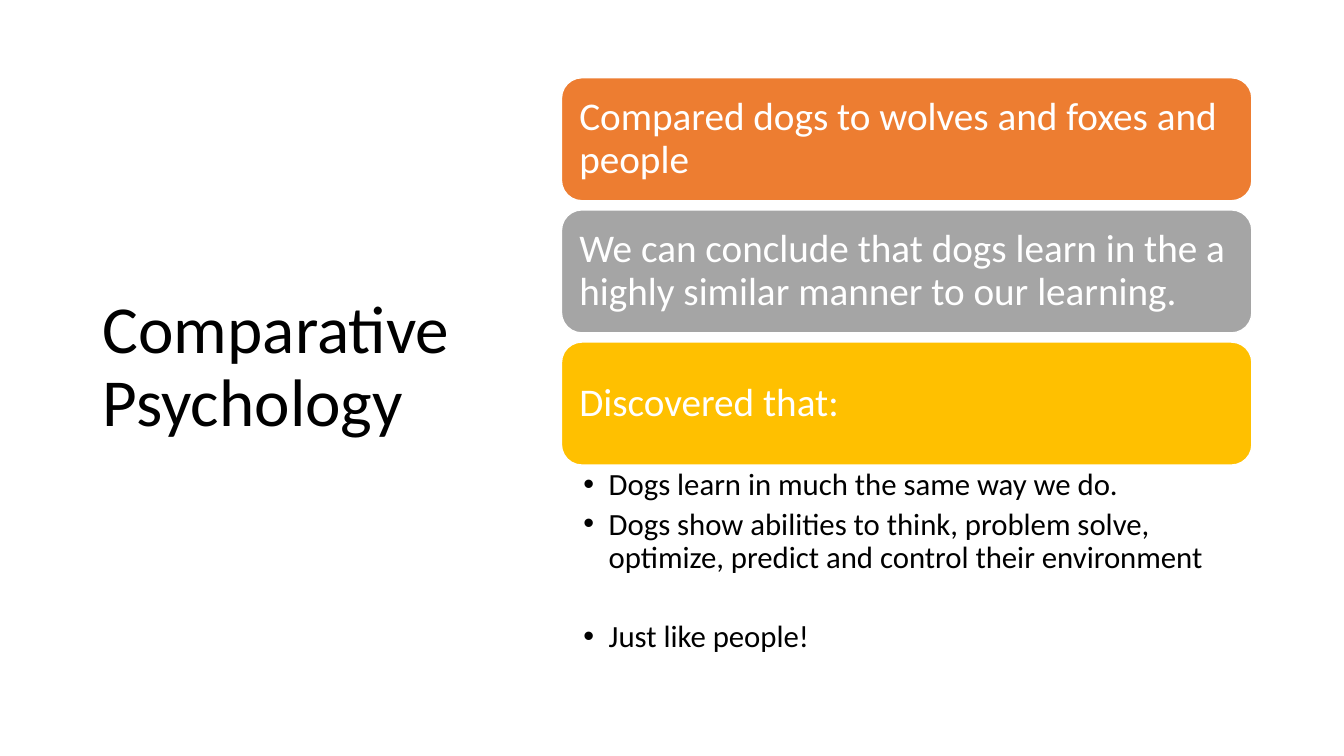
from lxml.etree import SubElement
from pptx import Presentation
from pptx.dml.color import RGBColor
from pptx.enum.shapes import MSO_SHAPE
from pptx.enum.text import MSO_ANCHOR, MSO_AUTO_SIZE, PP_ALIGN
from pptx.oxml.ns import qn
from pptx.util import Cm, Pt

FONT = "Calibri"
CARDS = [
    ("Compared dogs to wolves and foxes and people", "ED7D31"),
    ("We can conclude that dogs learn in the a highly similar manner to our learning.", "A5A5A5"),
    ("Discovered that:", "FFC000"),
]
# Each finding with its space before, in points
FINDINGS = [
    ("Dogs learn in much the same way we do.", 0),
    ("Dogs show abilities to think, problem solve, optimize, predict and control their environment", 0),
    ("Just like people!", 28.4),
]


def color(hex_string):
    return RGBColor.from_string(hex_string)


def place(shape, left, top, width, height):
    shape.left, shape.top = Cm(left), Cm(top)
    shape.width, shape.height = Cm(width), Cm(height)


def prepare_frame(shape, anchor, side=0.25, edge=0.13):
    """Set wrapping, anchor and insets (cm), and return the text frame."""
    frame = shape.text_frame
    frame.word_wrap = True
    frame.auto_size = MSO_AUTO_SIZE.NONE
    frame.vertical_anchor = anchor
    frame.margin_left = frame.margin_right = Cm(side)
    frame.margin_top = frame.margin_bottom = Cm(edge)
    return frame


def write(paragraph, text, size, hex_string, before=0, after=0):
    paragraph.alignment = PP_ALIGN.LEFT
    paragraph.line_spacing = 0.9
    paragraph.space_before = Pt(before)
    paragraph.space_after = Pt(after)
    run = paragraph.add_run()
    run.text = text
    run.font.name = FONT
    run.font.size = Pt(size)
    run.font.color.rgb = color(hex_string)


def add_bullet(paragraph, indent):
    properties = paragraph._p.get_or_add_pPr()
    properties.set("marL", str(Cm(indent)))
    properties.set("indent", str(-Cm(indent)))
    SubElement(properties, qn("a:buFont")).set("typeface", "Arial")
    SubElement(properties, qn("a:buChar")).set("char", "•")


def fill_title(slide, left, top, width, height):
    title = slide.shapes.title
    place(title, left, top, width, height)
    frame = prepare_frame(title, MSO_ANCHOR.MIDDLE)
    write(frame.paragraphs[0], "Comparative Psychology", 48, "000000")


def add_cards(slide, left, top, width, height, gap=0.23):
    card_height = (height - gap * (len(CARDS) - 1)) / len(CARDS)
    for index, (text, fill) in enumerate(CARDS):
        card_top = top + index * (card_height + gap)
        card = slide.shapes.add_shape(
            MSO_SHAPE.ROUNDED_RECTANGLE, Cm(left), Cm(card_top), Cm(width), Cm(card_height))
        card.shadow.inherit = False
        card.fill.solid()
        card.fill.fore_color.rgb = color(fill)
        card.line.color.rgb = color("FFFFFF")
        card.line.width = Pt(1)
        frame = prepare_frame(card, MSO_ANCHOR.MIDDLE, 0.3, 0.3)
        write(frame.paragraphs[0], text, 28, "FFFFFF")


def fill_findings(slide, left, top, width, height):
    body = slide.placeholders[1]
    place(body, left, top, width, height)
    frame = prepare_frame(body, MSO_ANCHOR.TOP, 0.55, 0.1)
    for index, (text, before) in enumerate(FINDINGS):
        paragraph = frame.add_paragraph() if index else frame.paragraphs[0]
        add_bullet(paragraph, 0.64)
        write(paragraph, text, 22, "000000", before, 4.4)


def main():
    presentation = Presentation()
    presentation.slide_width = Cm(33.87)
    presentation.slide_height = Cm(19.05)
    slide = presentation.slides.add_slide(presentation.slide_layouts[1])
    fill_title(slide, 2.34, 1.55, 9.37, 15.47)
    add_cards(slide, 14.15, 1.96, 17.4, 9.76)
    fill_findings(slide, 14.15, 11.72, 17.4, 5.08)
    presentation.save("out.pptx")


if __name__ == "__main__":
    main()
